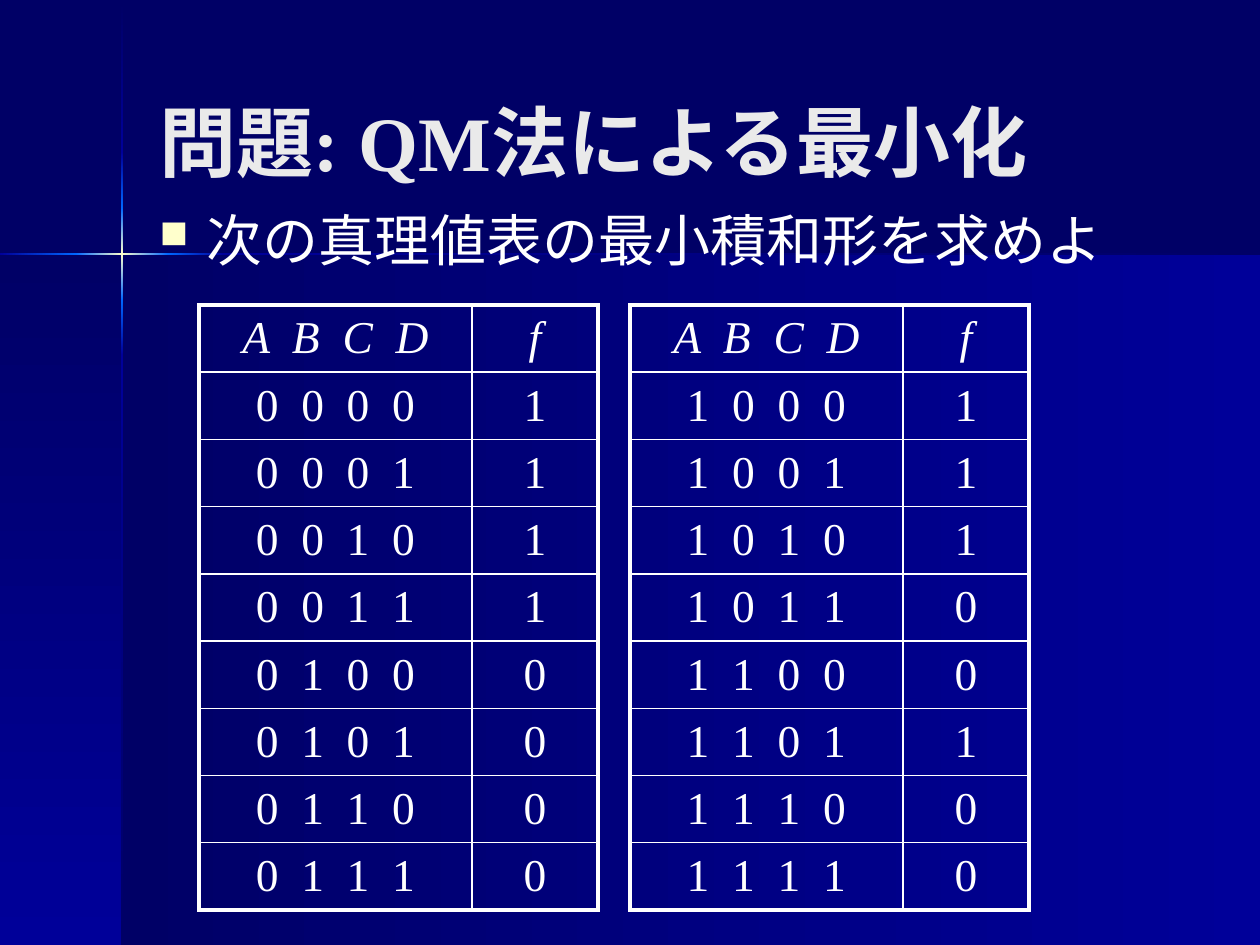
from dataclasses import dataclass
from itertools import pairwise

from lxml import etree
from pptx import Presentation
from pptx.dml.color import RGBColor
from pptx.enum.shapes import MSO_SHAPE
from pptx.enum.text import MSO_ANCHOR, PP_ALIGN
from pptx.oxml import parse_xml
from pptx.oxml.ns import nsdecls, qn
from pptx.util import Pt

RECT = MSO_SHAPE.RECTANGLE
MIDDLE, TOP = MSO_ANCHOR.MIDDLE, MSO_ANCHOR.TOP
CENTER = PP_ALIGN.CENTER


@dataclass(frozen=True)
class Theme:
    font: str = "Times New Roman"
    dark: str = "000066"
    mid: str = "000099"
    glow: str = "0066FF"
    spark: str = "FFFFCC"
    title: str = "EAEAEA"
    text: str = "FFFFFF"
    title_size: int = 44
    body_size: int = 32
    cell_size: int = 26
    thick: float = 2.25
    thin: float = 1


T = Theme()

# Content
TITLE = "問題: QM法による最小化"
TASK = "次の真理値表の最小積和形を求めよ"
VARS = "ABCD"
OUTPUTS = "1111000011100100"  # f for inputs 0000 to 1111

# Layout in px
WIDTH, HEIGHT = 1260, 945
AXIS_X, AXIS_Y, BEAM = 121, 253, 2
PANELS = [
    ((122, 255, 1138, 690), (T.dark, T.mid), 0),
    ((0, 255, 122, 690), (T.dark, T.mid), 90),
]
DOWN_STOPS = [1, 152, 208, 300, 355, 945]
DOWN_INKS = [(T.dark, T.mid), (T.mid, T.glow), (T.glow, T.spark, T.glow),
             (T.glow, T.mid), (T.mid, T.dark)]
ACROSS_STOPS = [0, 76, 168, 223, 1260]
ACROSS_INKS = DOWN_INKS[1:]
TITLE_BOX = (147, 42, 1040, 198)
TASK_BOX = (147, 199, 1040, 105)
TABLE_X, TABLE_Y, TABLE_H = (199, 630), 305, 605
COLS = (273, 126)
INDENT = 47


def px(n):
    return round(n * 914400 / 126)


def style(para, size, color, bold=False, italic=False):
    font = para.font
    font.name, font.size = T.font, Pt(size)
    font.color.rgb = RGBColor.from_string(color)
    font.bold, font.italic = bold, italic


def lead(para):
    """Space before the paragraph: 20 percent of its line."""
    props = para._p.get_or_add_pPr()
    gap = etree.SubElement(props, qn("a:spcBef"))
    etree.SubElement(gap, qn("a:spcPct"), val="20000")
    return props


def band(slide, box, inks, angle):
    shape = slide.shapes.add_shape(RECT, *map(px, box))
    shape.shadow.inherit = False
    shape.line.fill.background()
    last = len(inks) - 1
    stops = "".join(
        f'<a:gs pos="{100000 * i // last}"><a:srgbClr val="{ink}"/></a:gs>'
        for i, ink in enumerate(inks))
    fill = parse_xml(
        f'<a:gradFill {nsdecls("a")}><a:gsLst>{stops}</a:gsLst>'
        f'<a:lin ang="{angle * 60000}" scaled="0"/></a:gradFill>')
    shape._element.spPr.find(qn("a:prstGeom")).addnext(fill)


def label(slide, box, text, anchor):
    frame = slide.shapes.add_textbox(*map(px, box)).text_frame
    frame.word_wrap = True
    frame.vertical_anchor = anchor
    para = frame.paragraphs[0]
    para.text = text
    return para


def bullet(props):
    props.set("marL", str(px(INDENT)))
    props.set("indent", str(-px(INDENT)))
    tint = etree.SubElement(props, qn("a:buClr"))
    etree.SubElement(tint, qn("a:srgbClr"), val=T.spark)
    etree.SubElement(props, qn("a:buSzPct"), val="70000")
    etree.SubElement(props, qn("a:buChar"), char="■")


def border(cell, outer):
    props = cell._tc.get_or_add_tcPr()
    for side, edge in outer.items():
        width = Pt(T.thick if edge else T.thin)
        line = etree.SubElement(props, qn(f"a:ln{side}"), w=str(width))
        fill = etree.SubElement(line, qn("a:solidFill"))
        etree.SubElement(fill, qn("a:srgbClr"), val=T.text)


def truth(slide, left, rows):
    size = len(rows)
    box = (left, TABLE_Y, sum(COLS), TABLE_H)
    table = slide.shapes.add_table(size, len(COLS), *map(px, box)).table
    table.first_row = table.horz_banding = False
    for col, width in zip(table.columns, COLS):
        col.width = px(width)
    for r, row in enumerate(rows):
        table.rows[r].height = px(TABLE_H / size)
        for c, text in enumerate(row):
            cell = table.cell(r, c)
            cell.vertical_anchor = MIDDLE
            border(cell, {"L": c == 0, "R": c == len(COLS) - 1,
                          "T": r == 0, "B": r == size - 1})
            cell.fill.background()
            para = cell.text_frame.paragraphs[0]
            para.text = text
            lead(para)
            para.alignment = CENTER
            style(para, T.cell_size, T.text, italic=r == 0)


def main():
    deck = Presentation()
    deck.slide_width, deck.slide_height = px(WIDTH), px(HEIGHT)
    slide = deck.slides.add_slide(deck.slide_layouts[6])

    # Backdrop: two panels and a crossing pair of beams
    back = slide.background.fill
    back.solid()
    back.fore_color.rgb = RGBColor.from_string(T.dark)
    for box, inks, angle in PANELS:
        band(slide, box, inks, angle)
    for (a, b), inks in zip(pairwise(DOWN_STOPS), DOWN_INKS):
        band(slide, (AXIS_X, a, BEAM, b - a), inks, 90)
    for (a, b), inks in zip(pairwise(ACROSS_STOPS), ACROSS_INKS):
        band(slide, (a, AXIS_Y, b - a, BEAM), inks, 0)

    # Title and task
    para = label(slide, TITLE_BOX, TITLE, MIDDLE)
    style(para, T.title_size, T.title, bold=True)
    para = label(slide, TASK_BOX, TASK, TOP)
    bullet(lead(para))
    style(para, T.body_size, T.text)

    # Truth table in two halves
    head = ("  ".join(VARS), "f")
    rows = [("  ".join(f"{n:04b}"), f) for n, f in enumerate(OUTPUTS)]
    half = len(rows) // 2
    for i, left in enumerate(TABLE_X):
        truth(slide, left, [head] + rows[i * half:(i + 1) * half])

    deck.save("out.pptx")


if __name__ == "__main__":
    main()
